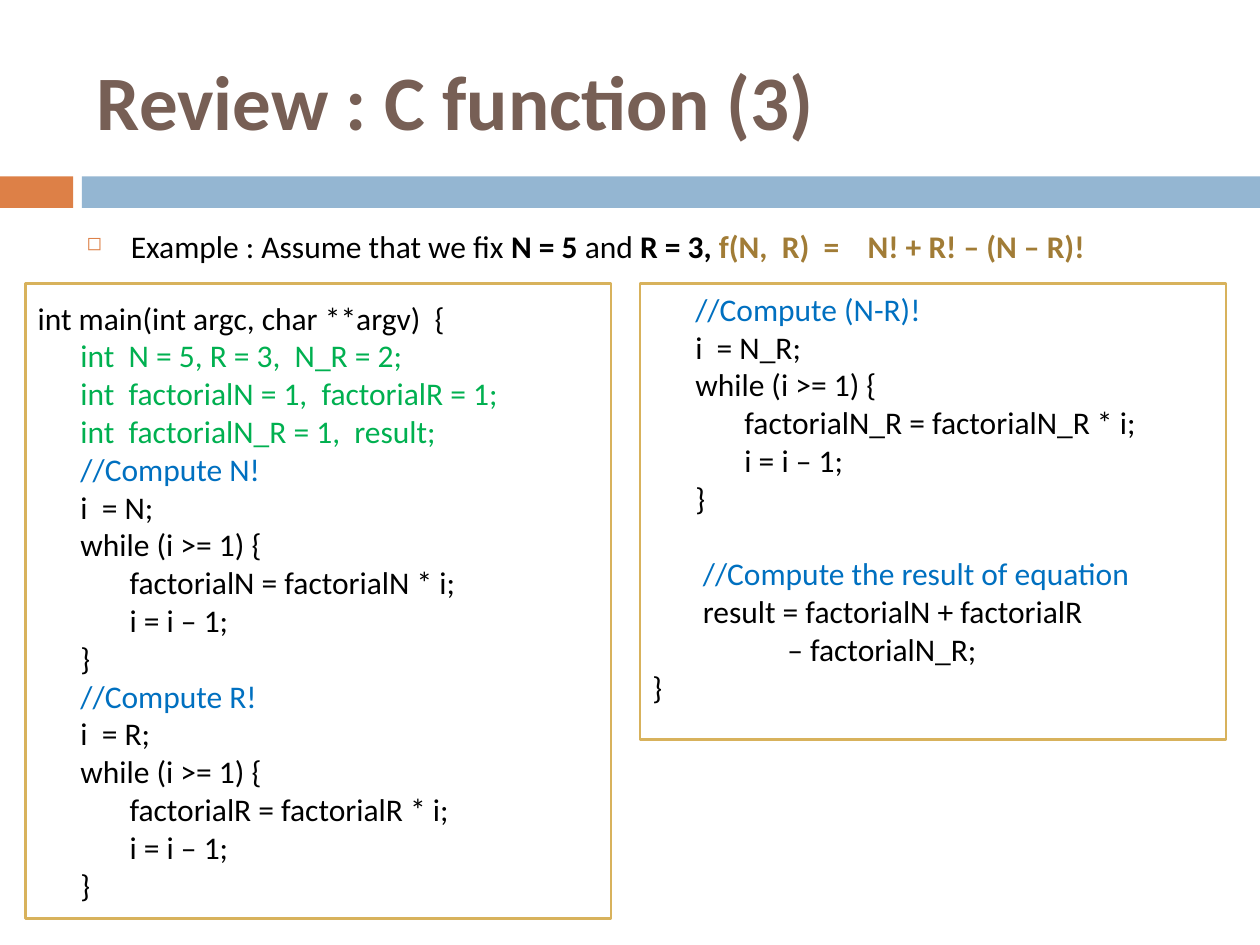
from dataclasses import dataclass

from lxml import etree
from pptx import Presentation, util as u
from pptx.dml.color import RGBColor
from pptx.enum import shapes, text
from pptx.oxml import ns


@dataclass(frozen=True)
class Theme:
    font: str = "Calibri"
    title_size: int = 44
    body_size: int = 18
    title: str = "775F55"
    orange: str = "DD8047"
    blue: str = "94B6D2"
    border: str = "D8B25C"
    paper: str = "FFFFFF"
    ink: str = "000000"
    declaration: str = "00B050"
    comment: str = "0070C0"
    formula: str = "A17C36"


def apply(target, values):
    for name, value in values.items():
        setattr(target, name, value)


class SlideBuilder:
    def __init__(self, slide, theme):
        self.slide = slide
        self.theme = theme

    def add_span(self, para, words, color, size=None, bold=False):
        span = para.add_run()
        span.text = words
        apply(span.font, {"name": self.theme.font, "bold": bold,
                          "size": u.Pt(size or self.theme.body_size)})
        span.font.color.rgb = RGBColor.from_string(color)

    def bar(self, place, fill, border=None):
        box = self.slide.shapes.add_shape(
            shapes.MSO_SHAPE.RECTANGLE, *map(u.Inches, place))
        box.shadow.inherit = False
        box.fill.solid()
        box.fill.fore_color.rgb = RGBColor.from_string(fill)
        if border:
            box.line.color.rgb = RGBColor.from_string(border)
            box.line.width = u.Pt(1.5)
        else:
            box.line.fill.background()
        return box

    def textbox(self, place, anchor):
        frame = self.slide.shapes.add_textbox(*map(u.Inches, place)).text_frame
        apply(frame, {"word_wrap": True, "vertical_anchor": anchor})
        return frame.paragraphs[0]

    def title(self, place, words):
        para = self.textbox(place, text.MSO_ANCHOR.MIDDLE)
        self.add_span(para, words, self.theme.title, self.theme.title_size, True)

    def bullet(self, place, spans):
        para = self.textbox(place, text.MSO_ANCHOR.TOP)
        props = para._p.get_or_add_pPr()
        props.set("marL", str(u.Inches(0.35)))
        props.set("indent", str(u.Inches(-0.35)))
        color = etree.SubElement(props, ns.qn("a:buClr"))
        etree.SubElement(color, ns.qn("a:srgbClr"), val=self.theme.orange)
        etree.SubElement(props, ns.qn("a:buSzPct"), val="60000")
        etree.SubElement(props, ns.qn("a:buChar"), char="◻")
        for words, color, bold in spans:
            self.add_span(para, words, color, bold=bold)

    def code(self, place, lines, anchor):
        frame = self.bar(place, self.theme.paper, self.theme.border).text_frame
        apply(frame, {"word_wrap": True, "vertical_anchor": anchor})
        for index, (indent, words, color, gap) in enumerate(lines):
            para = frame.add_paragraph() if index else frame.paragraphs[0]
            apply(para, {"alignment": text.PP_ALIGN.LEFT,
                         "space_before": u.Pt(gap)})
            para._p.get_or_add_pPr().set("marL", str(u.Inches(indent)))
            self.add_span(para, words, color)


THEME = Theme()
STEP, RESULT, DEEP, TAIL = 0.34, 0.4, 0.73, 1.07
BLANK_LINE = 21.6


def line(indent, words, color=THEME.ink, gap=0):
    return indent, words, color, gap


def factorial_loop(label, name):
    return [
        line(STEP, f"//Compute {label}!", THEME.comment),
        line(STEP, f"i  = {name};"),
        line(STEP, "while (i >= 1) {"),
        line(DEEP, f"factorial{name} = factorial{name} * i;"),
        line(DEEP, "i = i – 1;"),
        line(STEP, "}"),
    ]


def main():
    deck = Presentation()
    apply(deck, {"slide_width": u.Inches(10), "slide_height": u.Inches(7.5)})
    page = SlideBuilder(deck.slides.add_slide(deck.slide_layouts[6]), THEME)

    page.bar((0, 1.4, 0.58, 0.25), THEME.orange)
    page.bar((0.65, 1.4, 9.35, 0.25), THEME.blue)
    page.title((0.67, 0.25, 8.92, 1.08), "Review : C function (3)")

    declarations = [
        line(STEP, words, THEME.declaration)
        for words in ("int  N = 5, R = 3,  N_R = 2;",
                      "int  factorialN = 1,  factorialR = 1;",
                      "int  factorialN_R = 1,  result;")
    ]
    opening = [line(0, "int main(int argc, char **argv)  {"), *declarations]
    closing = [
        line(RESULT, "//Compute the result of equation", THEME.comment, BLANK_LINE),
        line(RESULT, "result = factorialN + factorialR"),
        line(TAIL, "– factorialN_R;"),
        line(0, "}"),
    ]
    page.code((0.2, 2.25, 4.65, 5.04),
              opening + factorial_loop("N", "N") + factorial_loop("R", "R"),
              text.MSO_ANCHOR.MIDDLE)
    page.code((5.08, 2.25, 4.65, 3.62),
              factorial_loop("(N-R)", "N_R") + closing,
              text.MSO_ANCHOR.TOP)

    page.bullet((0.59, 1.75, 8.9, 0.74), [
        ("Example : Assume that we fix ", THEME.ink, False),
        ("N = 5 ", THEME.ink, True),
        ("and ", THEME.ink, False),
        ("R = 3, ", THEME.ink, True),
        ("f(N,  R)  =    N! + R! – (N – R)!", THEME.formula, True),
    ])
    deck.save("out.pptx")


if __name__ == "__main__":
    main()
